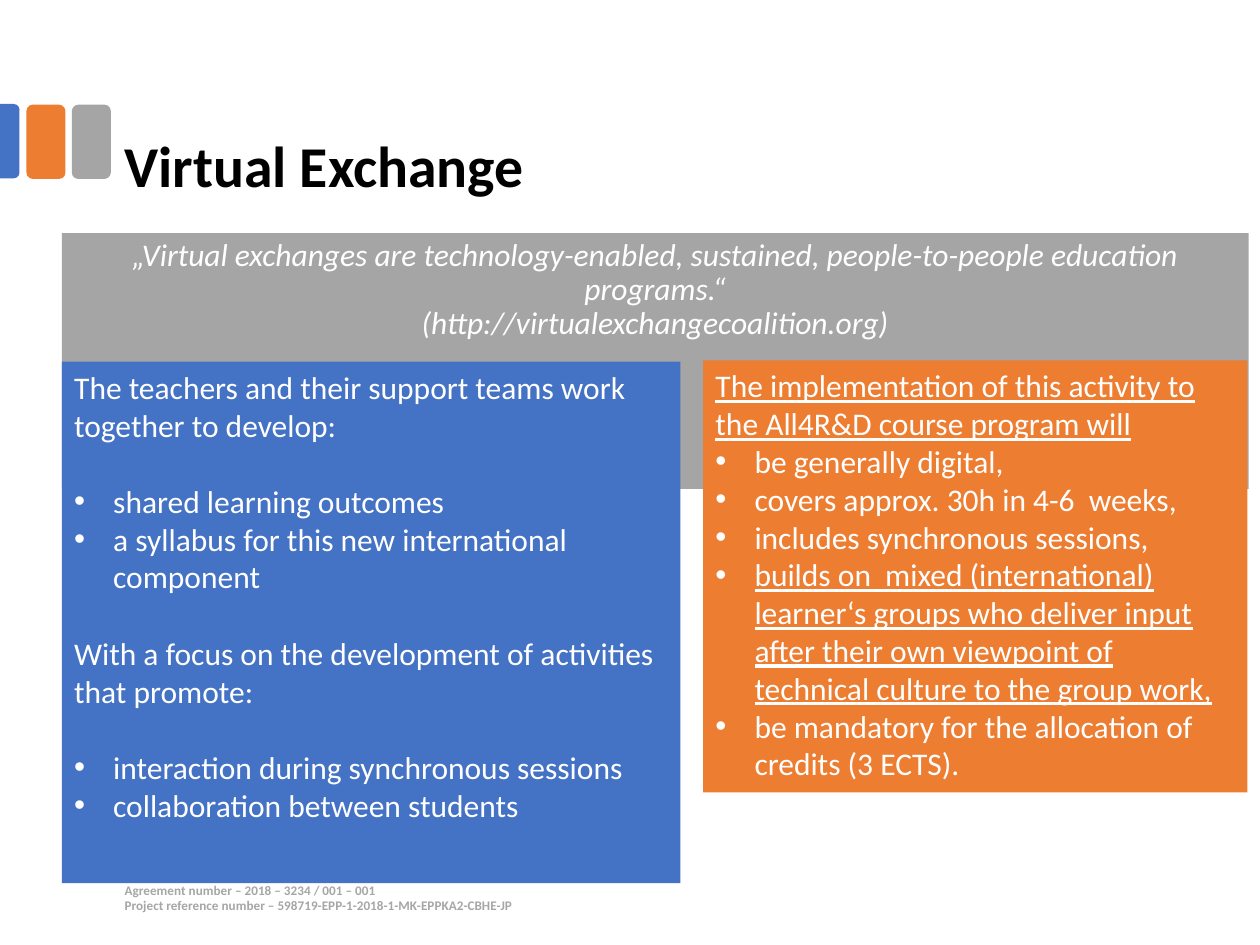
from pptx import Presentation
from pptx.dml.color import RGBColor
from pptx.enum.shapes import MSO_SHAPE as Shape
from pptx.enum.text import MSO_ANCHOR as Anchor, PP_ALIGN as Align
from pptx.oxml.ns import qn
from pptx.util import Emu, Inches, Pt
from lxml.etree import SubElement

BLUE, ORANGE, GRAY = "4472C4", "ED7D31", "A5A5A5"
WHITE, BLACK, PALE = "FFFFFF", "000000", "A6A6A6"
LINE_GAP = 22  # one line of 18 pt text


def color(code):
    return RGBColor.from_string(code)


class SlideBuilder:
    """Holds the style and the slide; places are percentages of its size."""

    font_name = "Calibri"
    indent = 0.31

    def __init__(self, deck):
        self.deck = deck
        self.slide = deck.slides.add_slide(deck.slide_layouts[6])

    def place(self, left, top, width, height):
        across, down = self.deck.slide_width, self.deck.slide_height
        return [Emu(round(share * size / 100)) for share, size in
                zip((left, top, width, height), (across, down, across, down))]

    def block(self, area, fill, kind=Shape.RECTANGLE):
        shape = self.slide.shapes.add_shape(kind, *self.place(*area))
        shape.shadow.inherit = False
        shape.fill.solid()
        shape.fill.fore_color.rgb = color(fill)
        shape.line.fill.background()
        return shape

    def label(self, area):
        return self.slide.shapes.add_textbox(*self.place(*area))

    def put_text(self, holder, lines, ink=WHITE, anchor=Anchor.TOP,
                 layout=None, **style):
        """Each line is a text, or a text with its own format values."""
        frame = holder.text_frame
        frame.word_wrap = True
        frame.vertical_anchor = anchor
        for number, line in enumerate(lines):
            text, own = line if isinstance(line, tuple) else (line, {})
            paragraph = frame.paragraphs[0] if number == 0 else frame.add_paragraph()
            paragraph.text = text
            if own.get("bullet"):
                self.add_bullet(paragraph)
            spacing = {"alignment": Align.LEFT, **(layout or {})}
            if "gap" in own:
                spacing["space_before"] = Pt(own["gap"])
            for name, value in spacing.items():
                setattr(paragraph, name, value)
            look = {"name": self.font_name, "size": Pt(18), **style,
                    "underline": own.get("underline")}
            for run in paragraph.runs:
                for name, value in look.items():
                    setattr(run.font, name, value)
                run.font.color.rgb = color(ink)

    def add_bullet(self, paragraph):
        props = paragraph._p.get_or_add_pPr()
        props.set("marL", str(Inches(self.indent)))
        props.set("indent", str(-Inches(self.indent)))
        SubElement(props, qn("a:buFont")).set("typeface", "Arial")
        SubElement(props, qn("a:buChar")).set("char", "•")


def item(text, **own):
    return text, {"bullet": True, **own}


def main():
    deck = Presentation()
    deck.slide_width, deck.slide_height = Inches(10), Inches(7.5)
    page = SlideBuilder(deck)

    # Footer
    page.put_text(page.label((8.9, 92.67, 60.5, 4.67)), [
        "Agreement number – 2018 – 3234 / 001 – 001",
        "Project reference number – 598719-EPP-1-2018-1-MK-EPPKA2-CBHE-JP",
    ], ink=PALE, size=Pt(7.5), bold=True)

    # Colour tabs beside the title
    for left, fill in ((5.7, GRAY), (2.1, ORANGE)):
        page.block((left, 11.07, 3.1, 7.87), fill, Shape.ROUNDED_RECTANGLE)
    edge_tab = page.block((-2.2, 13.87, 5.9, 2.13), BLUE,
                          Shape.ROUND_2_SAME_RECTANGLE)
    edge_tab.rotation = 90
    edge_tab.adjustments[0] = 0.29

    # Title
    page.put_text(page.label((8.9, 11.07, 86.2, 13.6)), ["Virtual Exchange"],
                  ink=BLACK, anchor=Anchor.MIDDLE, layout={"line_spacing": 0.9},
                  size=Pt(33), bold=True)

    # Quotation
    page.put_text(page.block((4.9, 24.67, 94.2, 27.07), GRAY), [
        "„Virtual exchanges are technology-enabled, sustained, "
        "people-to-people education programs.“\v"
        "(http://virtualexchangecoalition.org)",
    ], layout={"alignment": Align.CENTER, "line_spacing": 0.9}, italic=True)

    # Teachers' tasks
    page.put_text(page.block((4.9, 38.27, 49.1, 55.2), BLUE), [
        "The teachers and their support teams work together to develop:",
        item("shared learning outcomes", gap=LINE_GAP),
        item("a syllabus for this new international component"),
        ("With a focus on the development of activities that promote:",
         {"gap": LINE_GAP}),
        item("interaction during synchronous sessions", gap=LINE_GAP),
        item("collaboration between students"),
    ])

    # Course implementation
    page.put_text(page.block((55.8, 38.13, 43.2, 45.73), ORANGE), [
        ("The implementation of this activity to the All4R&D course program will",
         {"underline": True}),
        item("be generally digital,"),
        item("covers approx. 30h in 4-6  weeks,"),
        item("includes synchronous sessions,"),
        item("builds on  mixed (international) learner‘s groups who deliver "
             "input after their own viewpoint of technical culture to the "
             "group work,", underline=True),
        item("be mandatory for the allocation of credits (3 ECTS)."),
    ])

    deck.save("out.pptx")


if __name__ == "__main__":
    main()
